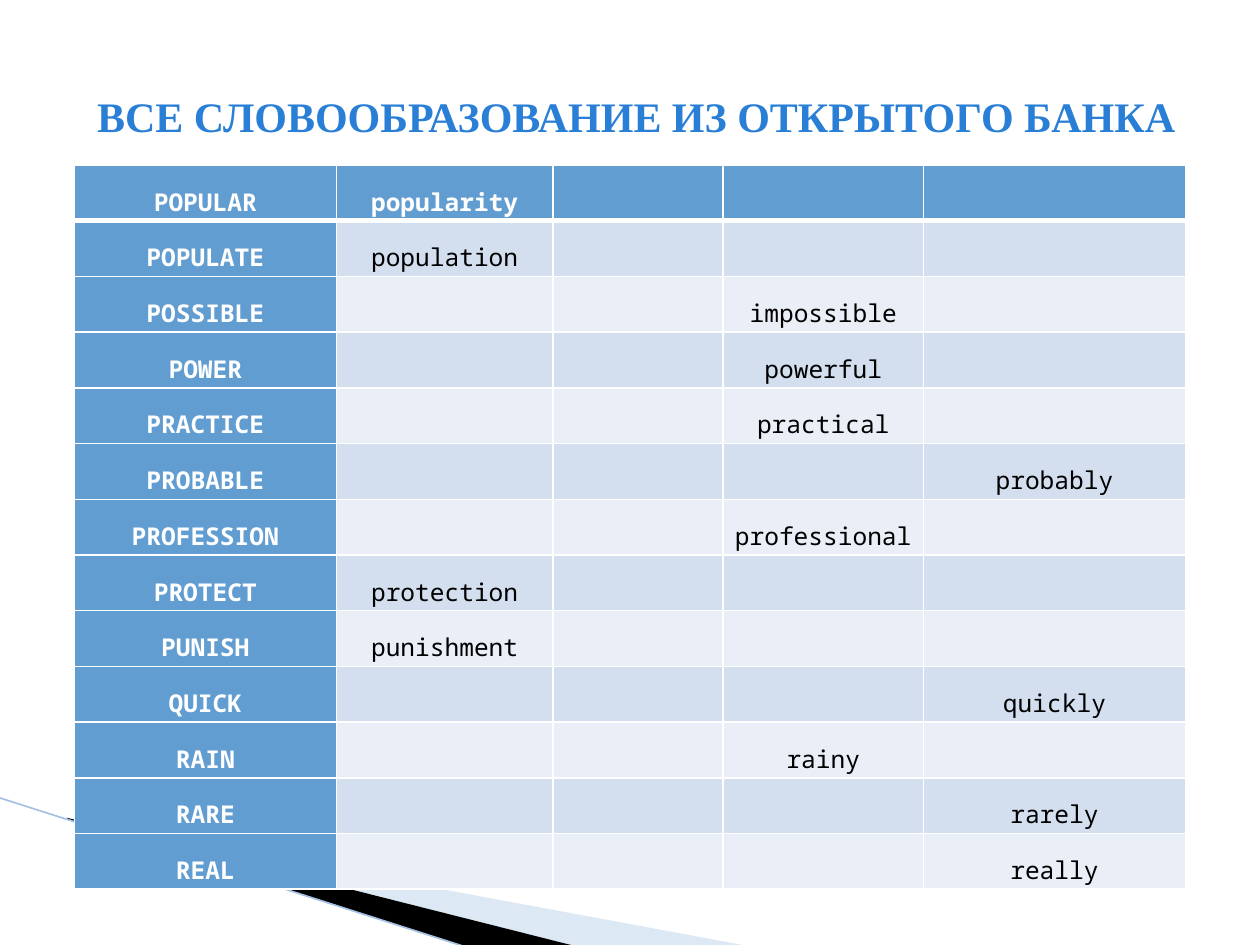
from dataclasses import dataclass

from lxml.etree import SubElement
from pptx import Presentation
from pptx.dml.color import RGBColor
from pptx.enum.text import MSO_ANCHOR, PP_ALIGN
from pptx.enum.shapes import MSO_CONNECTOR
from pptx.oxml.ns import qn
from pptx.util import Inches, Pt


@dataclass(frozen=True)
class Theme:
    """Colours, fonts and type sizes of the slide."""
    title: str = "297FD5"
    head: str = "629DD1"
    bands: tuple = ("EAEFF7", "D3DFEE")
    white: str = "FFFFFF"
    black: str = "000000"
    pale: str = "ABC6E6"
    rule: str = "A4C1E3"
    title_font: str = "Times New Roman"
    cell_font: str = "Noto Sans Mono"
    title_size: int = 24
    cell_size: int = 14


NOUN, ADJECTIVE, ADVERB = 1, 3, 4
WORDS = [
    ("POPULAR", NOUN, "popularity"),
    ("POPULATE", NOUN, "population"),
    ("POSSIBLE", ADJECTIVE, "impossible"),
    ("POWER", ADJECTIVE, "powerful"),
    ("PRACTICE", ADJECTIVE, "practical"),
    ("PROBABLE", ADVERB, "probably"),
    ("PROFESSION", ADJECTIVE, "professional"),
    ("PROTECT", NOUN, "protection"),
    ("PUNISH", NOUN, "punishment"),
    ("QUICK", ADVERB, "quickly"),
    ("RAIN", ADJECTIVE, "rainy"),
    ("RARE", ADVERB, "rarely"),
    ("REAL", ADVERB, "really"),
]
COLUMNS = [2.08, 1.72, 1.35, 1.59, 2.08]


def write(tf, text, *, font, size, color, bold=False, align=PP_ALIGN.LEFT, spacing=None):
    """Put one formatted run into the first paragraph of a text frame."""
    p = tf.paragraphs[0]
    p.alignment = align
    p.line_spacing = spacing
    r = p.add_run()
    r.text = text
    r.font.name = font
    r.font.size = Pt(size)
    r.font.bold = bold
    r.font.color.rgb = RGBColor.from_string(color)


class Deck:
    """Draws styled elements on the current slide."""

    def __init__(self, prs, theme):
        """Add a title-only slide."""
        self.theme = theme
        self.s = prs.slides.add_slide(prs.slide_layouts[5])

    def title(self, text, left, top, width, height):
        """Place and format the title placeholder."""
        sp = self.s.shapes.title
        sp.left, sp.top, sp.width, sp.height = map(Inches, (left, top, width, height))
        tf = sp.text_frame
        tf.word_wrap = True
        tf.vertical_anchor = MSO_ANCHOR.MIDDLE
        write(tf, text, font=self.theme.title_font, size=self.theme.title_size,
              color=self.theme.title, bold=True)

    def wedge(self, points, color, opacity=100):
        """Draw a filled outline without a border."""
        start, *rest = [(Inches(x), Inches(y)) for x, y in points]
        fb = self.s.shapes.build_freeform(*start)
        fb.add_line_segments(rest, close=True)
        sp = fb.convert_to_shape()
        sp.shadow.inherit = False
        sp.line.fill.background()
        sp.fill.solid()
        sp.fill.fore_color.rgb = RGBColor.from_string(color)
        if opacity < 100:
            clr = sp.fill._xPr.find(".//" + qn("a:srgbClr"))
            SubElement(clr, qn("a:alpha"), val=str(opacity * 1000))

    def line(self, x1, y1, x2, y2, color, width):
        """Draw a straight line."""
        cn = self.s.shapes.add_connector(
            MSO_CONNECTOR.STRAIGHT, *map(Inches, (x1, y1, x2, y2)))
        cn.line.color.rgb = RGBColor.from_string(color)
        cn.line.width = Pt(width)
        SubElement(cn._element.spPr, qn("a:effectLst"))

    def border(self, cell, **widths):
        """Set white cell borders, with widths given by side."""
        tcPr = cell._tc.get_or_add_tcPr()
        for side in "LRTB":
            ln = SubElement(tcPr, qn("a:ln" + side), w=str(Pt(widths.get(side, 1))))
            fill = SubElement(ln, qn("a:solidFill"))
            SubElement(fill, qn("a:srgbClr"), val=self.theme.white)

    def table(self, words, columns, left, top, height):
        """Draw the word table with a heading row and column."""
        t = self.theme
        frame = self.s.shapes.add_table(
            len(words), len(columns), *map(Inches, (left, top, sum(columns), height)))
        table = frame.table
        for column, width in zip(table.columns, columns):
            column.width = Inches(width)
        for row in table.rows:
            row.height = Inches(height / len(words))
        for i, (root, place, derived) in enumerate(words):
            texts = {0: root, place: derived}
            for j in range(len(columns)):
                cell = table.cell(i, j)
                heading = i == 0 or j == 0
                self.border(cell, B=3 if i == 0 else 1, T=3 if i == 1 else 1)
                cell.fill.solid()
                cell.fill.fore_color.rgb = RGBColor.from_string(
                    t.head if heading else t.bands[i % 2])
                cell.vertical_anchor = MSO_ANCHOR.BOTTOM
                cell.margin_left = cell.margin_right = Inches(0.03)
                cell.margin_top = cell.margin_bottom = Inches(0.02)
                if j in texts:
                    write(cell.text_frame, texts[j], font=t.cell_font, size=t.cell_size,
                          color=t.white if heading else t.black, bold=heading,
                          align=PP_ALIGN.CENTER, spacing=1.5)


def main():
    """Build the slide and save it."""
    prs = Presentation()
    prs.slide_width, prs.slide_height = Inches(10), Inches(7.5)
    theme = Theme()
    deck = Deck(prs, theme)
    deck.title("ВСЕ СЛОВООБРАЗОВАНИЕ ИЗ ОТКРЫТОГО БАНКА", 0.67, 0.29, 9, 1.25)
    deck.wedge([(0.55, 6.51), (5.95, 7.51), (4.56, 7.51), (0.55, 6.5)], theme.pale, 40)
    deck.wedge([(0.53, 6.49), (4.57, 7.51), (3.72, 7.52), (0.54, 6.5)], theme.black)
    deck.line(-0.01, 6.33, 3.71, 7.52, theme.rule, 0.95)
    deck.table(WORDS, COLUMNS, 0.59, 1.31, 5.75)
    prs.save("out.pptx")


if __name__ == "__main__":
    main()
